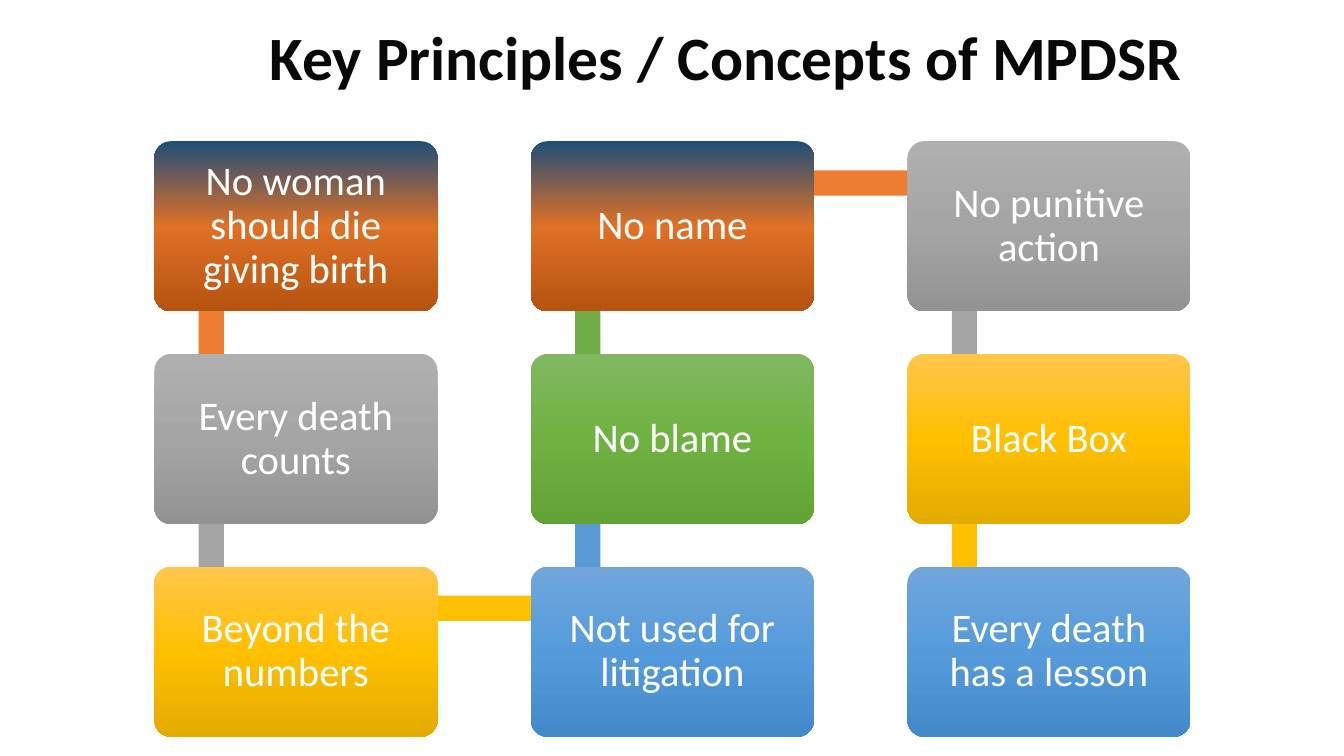
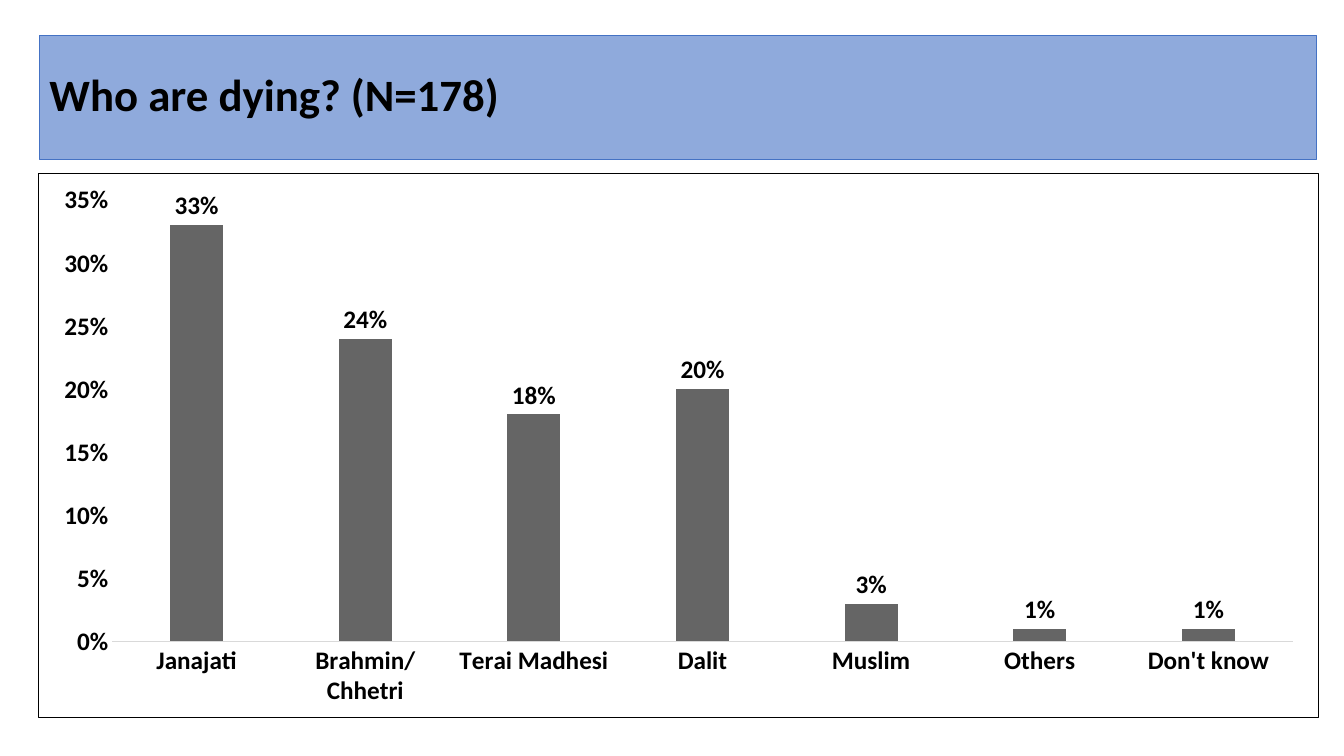
import copy
import dataclasses
import itertools

import lxml.etree
import pptx
import pptx.chart.data
import pptx.dml.color
import pptx.enum.chart
import pptx.enum.shapes
import pptx.enum.text
import pptx.oxml
import pptx.oxml.ns
import pptx.util

RGBColor = pptx.dml.color.RGBColor
Inches = pptx.util.Inches
Pt = pptx.util.Pt
ALIGN = pptx.enum.text.PP_ALIGN
SHAPE = pptx.enum.shapes.MSO_SHAPE
qn = pptx.oxml.ns.qn

FONT = "Calibri"
BLACK = RGBColor(0x00, 0x00, 0x00)
INK = RGBColor(0x08, 0x08, 0x08)
WHITE = RGBColor(0xFF, 0xFF, 0xFF)
BAND = RGBColor(0x8F, 0xAA, 0xDC)
BAND_LINE = RGBColor(0x44, 0x72, 0xC4)
BAR = RGBColor(0x65, 0x65, 0x65)
AXIS = RGBColor(0xD9, 0xD9, 0xD9)

GRID_LEFT, GRID_TOP = 1.53, 1.4
PITCH_X, PITCH_Y = 3.735, 2.11
BOX_W, BOX_H = 2.81, 1.69
LINK = 0.25
LINK_DX, LINK_DY = 0.44, 0.29


@dataclasses.dataclass(frozen=True)
class Tone:
    link: RGBColor
    top: RGBColor
    middle: RGBColor
    bottom: RGBColor


ORANGE = Tone(RGBColor(0xED, 0x7D, 0x31), RGBColor(0x1F, 0x4E, 0x79),
              RGBColor(0xDF, 0x70, 0x25), RGBColor(0xB5, 0x53, 0x10))
GREY = Tone(RGBColor(0xA5, 0xA5, 0xA5), RGBColor(0xAF, 0xAF, 0xAF),
            RGBColor(0xA5, 0xA5, 0xA5), RGBColor(0x93, 0x93, 0x93))
GOLD = Tone(RGBColor(0xFF, 0xC0, 0x00), RGBColor(0xFF, 0xC6, 0x4B),
            RGBColor(0xFF, 0xC0, 0x00), RGBColor(0xE3, 0xAB, 0x00))
BLUE = Tone(RGBColor(0x5B, 0x9B, 0xD5), RGBColor(0x71, 0xA6, 0xDB),
            RGBColor(0x55, 0x9B, 0xDB), RGBColor(0x44, 0x8A, 0xCA))
GREEN = Tone(RGBColor(0x70, 0xAD, 0x47), RGBColor(0x81, 0xB8, 0x61),
             RGBColor(0x6F, 0xB2, 0x42), RGBColor(0x62, 0xA3, 0x36))


@dataclasses.dataclass(frozen=True)
class Principle:
    text: str
    col: int
    row: int
    tone: Tone

    @property
    def left(self) -> float:
        return GRID_LEFT + self.col * PITCH_X

    @property
    def top(self) -> float:
        return GRID_TOP + self.row * PITCH_Y


PRINCIPLES = [
    Principle("No woman should die giving birth", 0, 0, ORANGE),
    Principle("Every death counts", 0, 1, GREY),
    Principle("Beyond the numbers", 0, 2, GOLD),
    Principle("Not used for litigation", 1, 2, BLUE),
    Principle("No blame", 1, 1, GREEN),
    Principle("No name", 1, 0, ORANGE),
    Principle("No punitive action", 2, 0, GREY),
    Principle("Black Box", 2, 1, GOLD),
    Principle("Every death has a lesson", 2, 2, BLUE),
]

DEATHS = {
    "Janajati": 0.33, "Brahmin/Chhetri": 0.24, "Terai Madhesi": 0.18,
    "Dalit": 0.2, "Muslim": 0.03, "Others": 0.01, "Don't know": 0.01,
}


def style_font(font, *, size: float, color: RGBColor, bold: bool = False) -> None:
    font.name = FONT
    font.size = Pt(size)
    font.bold = bold
    font.color.rgb = color


def write(sp, text: str, *, size: float, color: RGBColor, bold: bool = False,
          align=ALIGN.CENTER, inset: tuple = (0.1, 0.05)) -> None:
    tf = sp.text_frame
    tf.word_wrap = True
    tf.auto_size = pptx.enum.text.MSO_AUTO_SIZE.NONE
    tf.vertical_anchor = pptx.enum.text.MSO_ANCHOR.MIDDLE
    tf.margin_left = tf.margin_right = Inches(inset[0])
    tf.margin_top = tf.margin_bottom = Inches(inset[1])
    p = tf.paragraphs[0]
    p.alignment = align
    p.line_spacing = 0.9
    r = p.add_run()
    r.text = text
    style_font(r.font, size=size, color=color, bold=bold)


def add_slide(prs, title: str, at: tuple, **style):
    s = prs.slides.add_slide(prs.slide_layouts[5])
    sp = s.shapes.title
    sp.left, sp.top, sp.width, sp.height = map(Inches, at)
    write(sp, title, bold=True, **style)
    return s


def add_block(s, kind, left: float, top: float, width: float, height: float):
    sp = s.shapes.add_shape(kind, *map(Inches, (left, top, width, height)))
    sp.shadow.inherit = False
    sp.line.fill.background()
    return sp


def add_link(s, start: Principle, end: Principle) -> None:
    left, top = min(start.left, end.left), min(start.top, end.top)
    if start.row == end.row:
        at = (left + LINK_DX + LINK / 2, top + LINK_DY, PITCH_X, LINK)
    else:
        at = (left + LINK_DX, top + LINK_DY + LINK / 2, LINK, PITCH_Y)
    sp = add_block(s, SHAPE.RECTANGLE, *at)
    sp.fill.solid()
    sp.fill.fore_color.rgb = start.tone.link


def add_box(s, item: Principle) -> None:
    sp = add_block(s, SHAPE.ROUNDED_RECTANGLE, item.left, item.top, BOX_W, BOX_H)
    sp.adjustments[0] = 0.1
    sp.fill.gradient()
    sp.fill.gradient_angle = 270
    stops = sp._element.spPr.find(".//" + qn("a:gsLst"))
    stops.append(copy.deepcopy(stops[0]))
    colors = (item.tone.top, item.tone.middle, item.tone.bottom)
    for stop, color, position in zip(sp.fill.gradient_stops, colors, (0, 0.5, 1)):
        stop.color.rgb = color
        stop.position = position
    write(sp, item.text, size=29, color=WHITE, inset=(0.12, 0.12))


def add_border(chart, color: RGBColor, width: float) -> None:
    sp_pr = pptx.oxml.parse_xml(
        f'<c:spPr {pptx.oxml.ns.nsdecls("c", "a")}><a:noFill/>'
        f'<a:ln w="{Pt(width)}"><a:solidFill><a:srgbClr val="{color}"/>'
        '</a:solidFill></a:ln></c:spPr>')
    chart._chartSpace.find(qn("c:chart")).addnext(sp_pr)


def add_deaths_chart(s) -> None:
    data = pptx.chart.data.CategoryChartData(number_format="0%")
    data.categories = list(DEATHS)
    data.add_series("Series 1", list(DEATHS.values()))
    chart = s.shapes.add_chart(
        pptx.enum.chart.XL_CHART_TYPE.COLUMN_CLUSTERED,
        *map(Inches, (0.38, 1.72, 12.7, 5.4)), data).chart
    chart.has_legend = False
    chart.has_title = False
    style_font(chart.font, size=18, color=BLACK, bold=True)
    add_border(chart, BLACK, 0.75)

    plot = chart.plots[0]
    plot.vary_by_categories = False
    plot.gap_width = 219
    plot.overlap = -27
    fill = plot.series[0].format.fill
    fill.solid()
    fill.fore_color.rgb = BAR
    plot.has_data_labels = True
    labels = plot.data_labels
    labels.show_value = True
    labels.position = pptx.enum.chart.XL_LABEL_POSITION.OUTSIDE_END
    labels.number_format = "0%"
    labels.number_format_is_linked = False
    style_font(labels.font, size=18, color=BLACK, bold=True)

    for axis in (chart.category_axis, chart.value_axis):
        axis.has_major_gridlines = False
        axis.major_tick_mark = pptx.enum.chart.XL_TICK_MARK.NONE
        style_font(axis.tick_labels.font, size=18, color=BLACK, bold=True)
    chart.category_axis.format.line.color.rgb = AXIS
    chart.category_axis.format.line.width = Pt(0.75)
    values = chart.value_axis
    values.format.line.fill.background()
    values.minimum_scale, values.maximum_scale, values.major_unit = 0, 0.35, 0.05
    values.tick_labels.number_format = "0%"
    values.tick_labels.number_format_is_linked = False


def build_principles(prs) -> None:
    s = add_slide(prs, "Key Principles / Concepts of MPDSR",
                  (1.35, 0.2, 11.71, 0.8), size=44, color=INK)
    for item, following in itertools.zip_longest(PRINCIPLES, PRINCIPLES[1:]):
        if following:
            add_link(s, item, following)
        add_box(s, item)


def build_deaths(prs) -> None:
    s = add_slide(prs, "Who are dying? (N=178)", (0.39, 0.35, 12.67, 1.23),
                  size=32, color=BLACK, align=ALIGN.LEFT)
    band = s.shapes.title
    band.fill.solid()
    band.fill.fore_color.rgb = BAND
    band.line.color.rgb = BAND_LINE
    band.line.width = Pt(0.75)
    add_deaths_chart(s)


def main() -> None:
    prs = pptx.Presentation()
    prs.slide_width, prs.slide_height = Inches(13.33), Inches(7.5)
    build_principles(prs)
    build_deaths(prs)
    prs.save("out.pptx")


if __name__ == "__main__":
    main()
